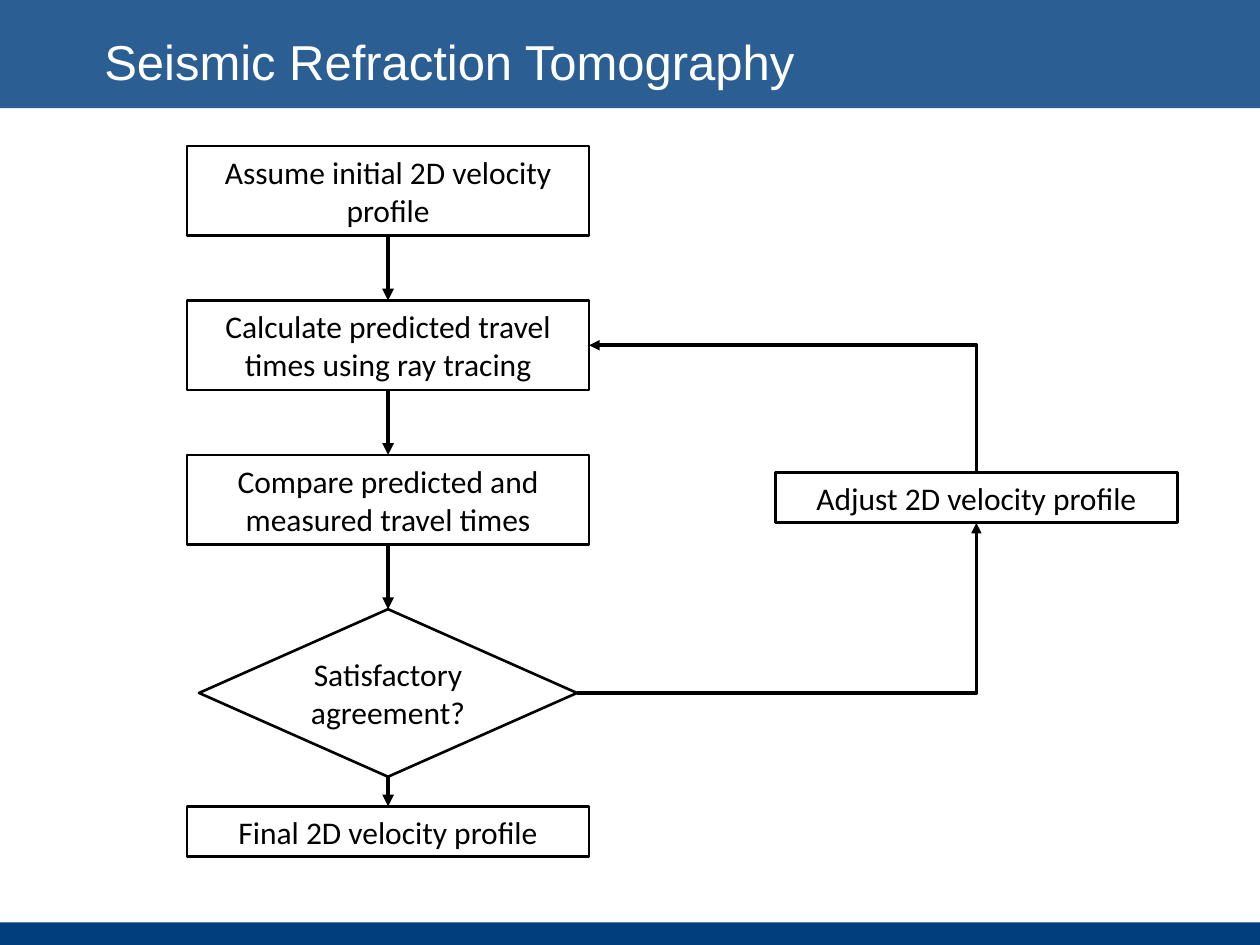
import lxml.etree
import pptx
import pptx.dml.color
import pptx.enum.shapes
import pptx.enum.text
import pptx.oxml.ns
import pptx.util

COLORS = {"navy": "003E7E", "black": "000000", "white": "FFFFFF"}
SHAPE = pptx.enum.shapes.MSO_SHAPE
qn = pptx.oxml.ns.qn


def rgb(name):
    return pptx.dml.color.RGBColor.from_string(COLORS[name])


def write(sp, text, size=18, font="Calibri", color="black", align="CENTER", wrap=True):
    tf = sp.text_frame
    tf.word_wrap = wrap
    tf.vertical_anchor = pptx.enum.text.MSO_ANCHOR.MIDDLE
    p = tf.paragraphs[0]
    p.text = text
    p.alignment = getattr(pptx.enum.text.PP_ALIGN, align)
    for r in p.runs:
        r.font.size = pptx.util.Pt(size)
        r.font.name = font
        r.font.color.rgb = rgb(color)


class Slide:
    """Draws flowchart elements on a grid of 100 columns by 75 rows."""

    def __init__(self, prs, columns=100):
        self.unit = prs.slide_width / columns
        self.s = prs.slides.add_slide(prs.slide_layouts[6])

    def grid(self, *cells):
        return [round(c * self.unit) for c in cells]

    def outline(self, sp, width, arrow=False):
        sp.line.color.rgb = rgb("black")
        sp.line.width = pptx.util.Pt(width)
        if arrow:
            ln = sp.element.spPr.find(qn("a:ln"))
            lxml.etree.SubElement(ln, qn("a:tailEnd"), type="triangle")

    def band(self, top, height, alpha=100):
        sp = self.s.shapes.add_shape(SHAPE.RECTANGLE, *self.grid(0, top, 100, height))
        sp.shadow.inherit = False
        sp.fill.solid()
        sp.fill.fore_color.rgb = rgb("navy")
        sp.line.fill.background()
        if alpha < 100:
            clr = sp.element.spPr.find(qn("a:solidFill"))[0]
            lxml.etree.SubElement(clr, qn("a:alpha"), val=str(alpha * 1000))

    def title(self, text, *cells):
        sp = self.s.shapes.add_textbox(*self.grid(*cells))
        write(sp, text, size=28, font="Arial", color="white", align="LEFT")

    def node(self, text, center, top, width, height, kind=SHAPE.RECTANGLE, wrap=True):
        cells = self.grid(center - width / 2, top, width, height)
        sp = self.s.shapes.add_shape(kind, *cells)
        sp.shadow.inherit = False
        sp.fill.background()
        self.outline(sp, 1.5)
        write(sp, text, wrap=wrap)

    def arrow(self, x, top, bottom):
        cells = self.grid(x, top, x, bottom)
        sp = self.s.shapes.add_connector(pptx.enum.shapes.MSO_CONNECTOR.STRAIGHT, *cells)
        self.outline(sp, 2.25, arrow=True)
        lxml.etree.SubElement(sp.element.spPr, qn("a:effectLst"))

    def elbow(self, *points):
        start, *rest = [self.grid(*pt) for pt in points]
        fb = self.s.shapes.build_freeform(*start)
        fb.add_line_segments(rest, close=False)
        sp = fb.convert_to_shape()
        sp.shadow.inherit = False
        sp.fill.background()
        self.outline(sp, 2, arrow=True)


def main():
    prs = pptx.Presentation()
    prs.slide_width = pptx.util.Inches(10)
    prs.slide_height = pptx.util.Inches(7.5)
    s = Slide(prs)

    s.band(73.2, 1.8)
    s.band(0, 8.6, alpha=83)
    s.title("Seismic Refraction Tomography", 7.3, 1.9, 67.7, 5.8)

    main_x, loop_x, width, tall, low = 30.8, 77.5, 31.9, 7.1, 4
    first, pitch = 11.6, 12.25
    steps = [
        "Assume initial 2D velocity profile",
        "Calculate predicted travel times using ray tracing",
        "Compare predicted and measured travel times",
    ]
    for i, text in enumerate(steps):
        top = first + i * pitch
        s.node(text, main_x, top, width, tall)
        s.arrow(main_x, top + tall, top + pitch)

    test, test_w, test_h, final = first + len(steps) * pitch, 30, 13.3, 64
    s.node("Satisfactory\nagreement?", main_x, test, test_w, test_h, SHAPE.DIAMOND, wrap=False)
    s.arrow(main_x, test + test_h, final)
    s.node("Final 2D velocity profile", main_x, final, width, low)

    adjust = 37.5
    s.node("Adjust 2D velocity profile", loop_x, adjust, width, low)
    test_y, calc_y = test + test_h / 2, first + pitch + tall / 2
    s.elbow((main_x + test_w / 2, test_y), (loop_x, test_y), (loop_x, adjust + low))
    s.elbow((loop_x, adjust), (loop_x, calc_y), (main_x + width / 2, calc_y))

    prs.save("out.pptx")


if __name__ == "__main__":
    main()
